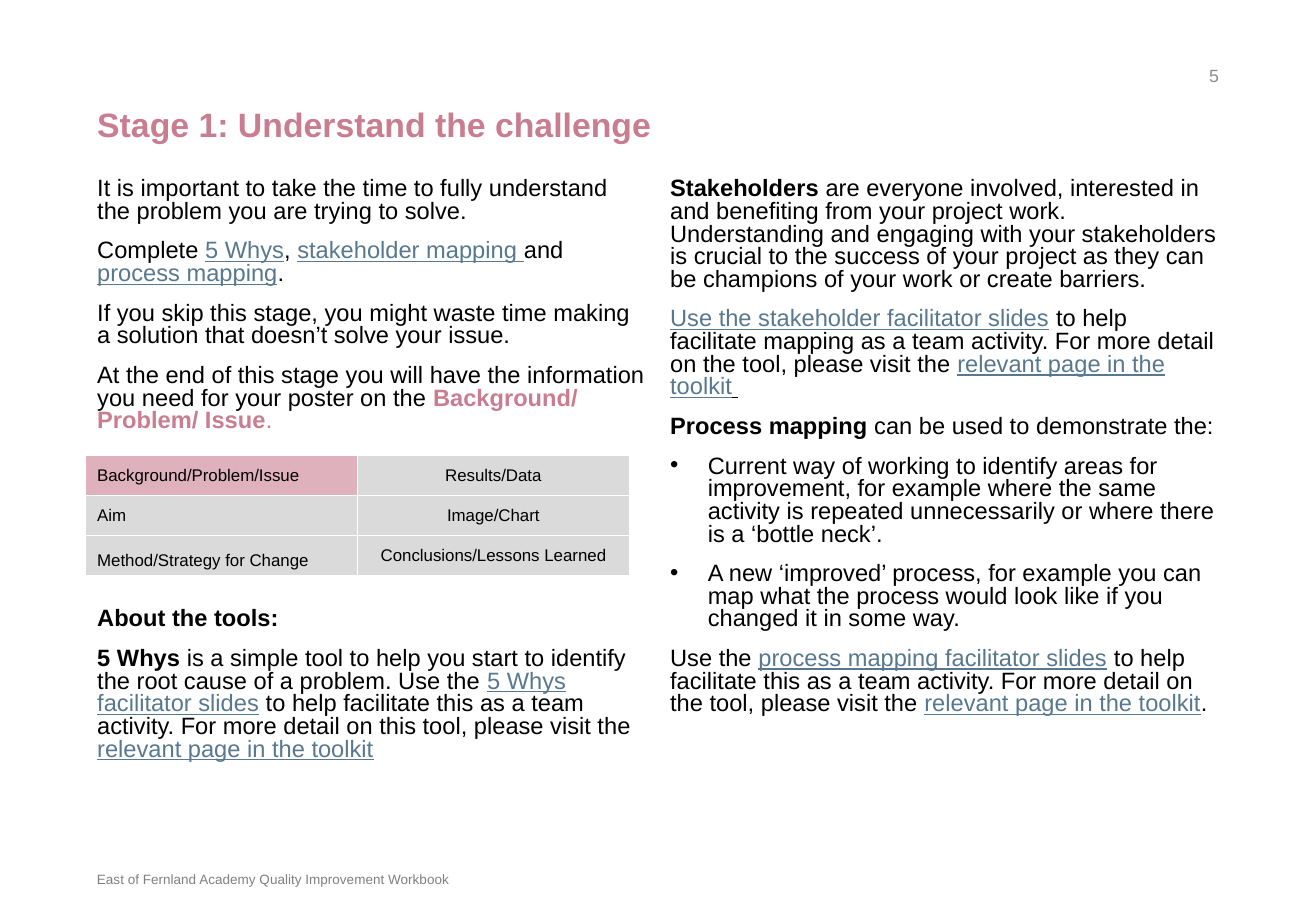
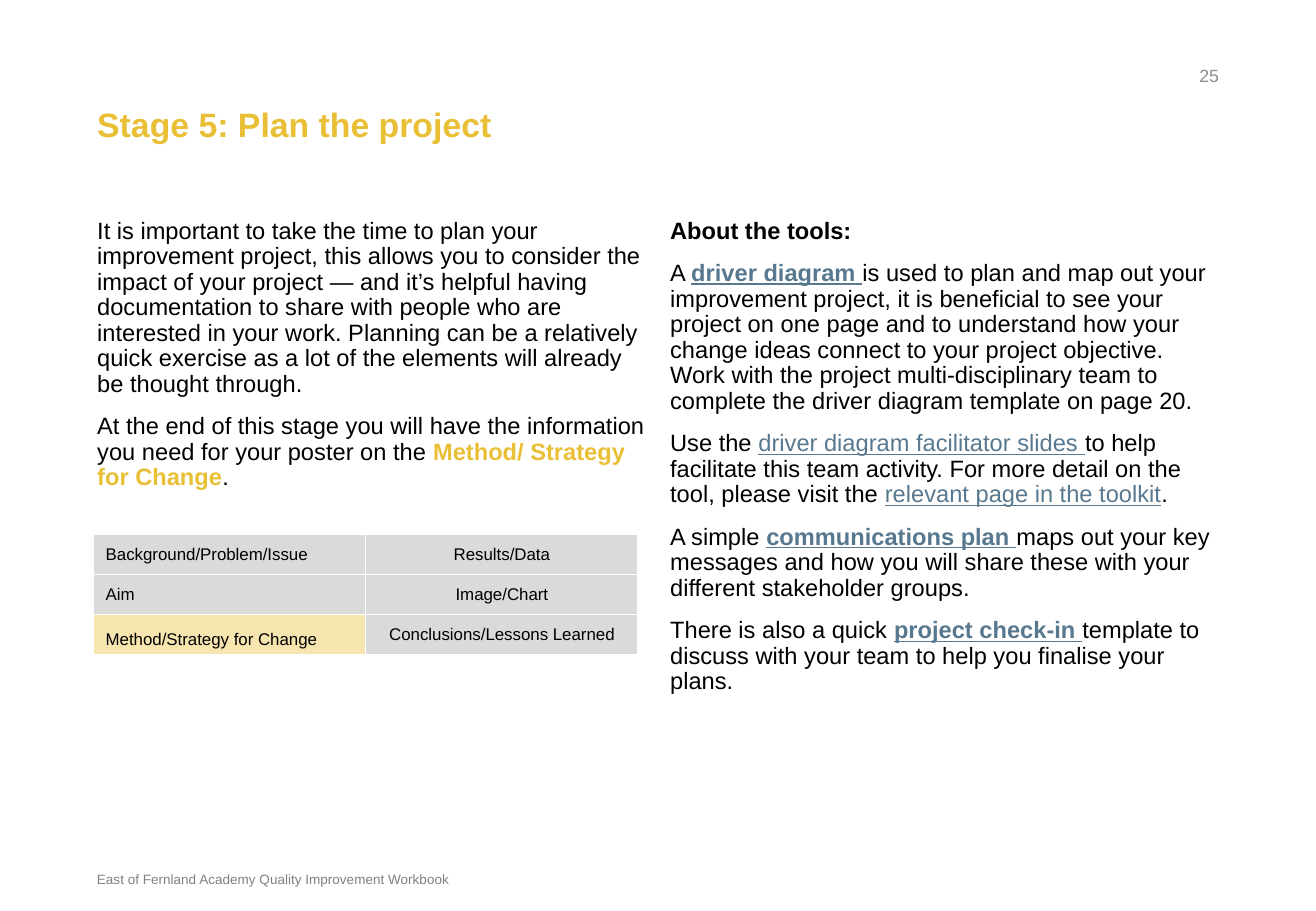
from lxml import etree
from pptx import Presentation
from pptx import util as u
from pptx.dml.color import RGBColor
from pptx.enum import text as t
from pptx.oxml.ns import qn

FONT = "Arial"
COLOURS = {
    "text": "000000", "link": "57788F", "number": "8C8C8C", "footer": "808080",
    "cell": "DADADA", "border": "FFFFFF",
    "rose": "C97D91", "rose_tint": "DFB1BD",
    "gold": "E9BF35", "gold_tint": "F6E5AE",
}
FOOTER = "East of Fernland Academy Quality Improvement Workbook"
POSTER = [
    ("Background/Problem/Issue", "Results/Data"),
    ("Aim", "Image/Chart"),
    ("Method/Strategy for Change", "Conclusions/Lessons Learned"),
]
TITLE_BOX = (0.7, 0.84, 9.43, 0.77)
NUMBER_BOX = (7.79, 0.42, 2.34, 0.4)
FOOTER_BOX = (0.7, 6.95, 6.73, 0.4)
TWO_CONTENT = 3
SPACE_BEFORE = 10

# A paragraph holds runs, each a string or a (text, style words) pair,
# and optional keys: "before" (points) and "bullet".
STAGES = [
    {
        "title": "Stage 1: Understand the challenge", "number": "5", "accent": "rose",
        "body": (0.7, 1.42, 9.43, 5.1), "spacing": 0.8,
        "table": (0.7, 3.75, 4.48, 0.99), "highlight": 0,
        "columns": [
            [
                {"runs": ["It is important to take the time to fully understand the problem "
                          "you are trying to solve."]},
                {"runs": ["Complete ", ("5 Whys", "link"), ", ",
                          ("stakeholder mapping ", "link"), "and ",
                          ("process mapping", "link"), "."]},
                {"runs": ["If you skip this stage, you might waste time making a solution "
                          "that doesn’t solve your issue."]},
                {"runs": ["At the end of this stage you will have the information you need "
                          "for your poster on the ",
                          ("Background/ Problem/ Issue", "accent bold"), (".", "accent")]},
                {"runs": [("About the tools:", "bold")], "before": 104},
                {"runs": [("5 Whys ", "bold"),
                          "is a simple tool to help you start to identify the root cause of "
                          "a problem. Use the ", ("5 Whys facilitator slides", "link"),
                          " to help facilitate this as a team activity. For more detail on "
                          "this tool, please visit the ",
                          ("relevant page in the toolkit", "link")]},
            ],
            [
                {"runs": [("Stakeholders", "bold"),
                          " are everyone involved, interested in and benefiting from your "
                          "project work. Understanding and engaging with your stakeholders "
                          "is crucial to the success of your project as they can be "
                          "champions of your work or create barriers."]},
                {"runs": [("Use the stakeholder facilitator slides", "link"),
                          " to help facilitate mapping as a team activity. For more detail "
                          "on the tool, please visit the ",
                          ("relevant page in the toolkit", "link"), (" ", "underline")]},
                {"runs": [("Process mapping ", "bold"), "can be used to demonstrate the:"]},
                {"runs": ["Current way of working to identify areas for improvement, for "
                          "example where the same activity is repeated unnecessarily or "
                          "where there is a ‘bottle neck’."], "bullet": True},
                {"runs": ["A new ‘improved’ process, for example you can map what the "
                          "process would look like if you changed it in some way."],
                 "bullet": True},
                {"runs": ["Use the ", ("process mapping facilitator slides", "link"),
                          " to help facilitate this as a team activity. For more detail on "
                          "the tool, please visit the ",
                          ("relevant page in the toolkit", "link"), "."]},
            ],
        ],
    },
    {
        "title": "Stage 5: Plan the project", "number": "25", "accent": "gold",
        "body": (0.7, 1.75, 9.43, 5.45), "spacing": 0.9,
        "table": (0.77, 4.4, 4.48, 0.99), "highlight": 2,
        "columns": [
            [
                {"runs": ["It is important to take the time to plan your improvement "
                          "project, this allows you to consider the impact of your project "
                          "— and it’s helpful having documentation to share with people who "
                          "are interested in your work. Planning can be a relatively quick "
                          "exercise as a lot of the elements will already be thought "
                          "through."]},
                {"runs": ["At the end of this stage you will have the information you need "
                          "for your poster on the ",
                          ("Method/ Strategy for Change", "accent bold"), "."]},
            ],
            [
                {"runs": [("About the tools:", "bold")]},
                {"runs": ["A ", ("driver diagram ", "link bold"),
                          "is used to plan and map out your improvement project, it is "
                          "beneficial to see your project on one page and to understand how "
                          "your change ideas connect to your project objective. Work with "
                          "the project multi-disciplinary team to complete the driver "
                          "diagram template on page 20."]},
                {"runs": ["Use the ", ("driver diagram facilitator slides ", "link"),
                          "to help facilitate this team activity. For more detail on the "
                          "tool, please visit the ",
                          ("relevant page in the toolkit", "link"), "."]},
                {"runs": ["A simple ", ("communications plan ", "link bold"),
                          "maps out your key messages and how you will share these with "
                          "your different stakeholder groups."]},
                {"runs": ["There is also a quick ", ("project check-in ", "link bold"),
                          "template to discuss with your team to help you finalise your "
                          "plans."]},
            ],
        ],
    },
]


def inches(box):
    return [u.Inches(length) for length in box]


def rgb(name):
    return RGBColor.from_string(COLOURS[name])


def set_all(target, values):
    for name, value in values.items():
        setattr(target, name, value)


def add_run(paragraph, words, size, colour="text", bold=False, underline=False):
    run = paragraph.add_run()
    run.text = words
    set_all(run.font, {"name": FONT, "size": u.Pt(size), "bold": bold,
                       "underline": underline})
    run.font.color.rgb = rgb(colour)


def set_frame(shape, anchor):
    set_all(shape.text_frame, {"word_wrap": True, "auto_size": t.MSO_AUTO_SIZE.NONE,
                               "vertical_anchor": anchor})
    return shape.text_frame


def move(shape, box):
    set_all(shape, dict(zip(("left", "top", "width", "height"), inches(box))))


def set_bullet(paragraph, bullet):
    properties = paragraph._p.get_or_add_pPr()
    indent = u.Inches(0.31) if bullet else 0
    properties.set("marL", str(indent))
    properties.set("indent", str(-indent))
    if bullet:
        etree.SubElement(properties, qn("a:buChar"), char="•")
    else:
        etree.SubElement(properties, qn("a:buNone"))


def fill_title(shape, words, colour):
    move(shape, TITLE_BOX)
    paragraph = set_frame(shape, t.MSO_ANCHOR.TOP).paragraphs[0]
    set_all(paragraph, {"alignment": t.PP_ALIGN.LEFT, "line_spacing": 0.9})
    add_run(paragraph, words, 20, colour, bold=True)


def fill_column(shape, box, paragraphs, spacing, accent):
    move(shape, box)
    frame = set_frame(shape, t.MSO_ANCHOR.TOP)
    for index, content in enumerate(paragraphs):
        paragraph = frame.add_paragraph() if index else frame.paragraphs[0]
        set_all(paragraph, {"line_spacing": spacing, "alignment": t.PP_ALIGN.LEFT,
                            "space_before": u.Pt(content.get("before", SPACE_BEFORE))})
        set_bullet(paragraph, content.get("bullet", False))
        for item in content["runs"]:
            words, style = (item, "") if isinstance(item, str) else item
            link = "link" in style
            colour = "link" if link else accent if "accent" in style else "text"
            add_run(paragraph, words, 14, colour, "bold" in style,
                    link or "underline" in style)


def add_label(slide, box, words, size, colour, anchor, alignment):
    label = slide.shapes.add_textbox(*inches(box))
    paragraph = set_frame(label, anchor).paragraphs[0]
    paragraph.alignment = alignment
    add_run(paragraph, words, size, colour)


def add_borders(cell):
    properties = cell._tc.get_or_add_tcPr()
    for side in ("lnL", "lnR", "lnT", "lnB"):
        line = etree.SubElement(properties, qn(f"a:{side}"), w=str(u.Pt(1)))
        fill = etree.SubElement(line, qn("a:solidFill"))
        etree.SubElement(fill, qn("a:srgbClr"), val=COLOURS["border"])


def add_poster_table(slide, box, highlight, tint):
    """Draw the poster sections, with one cell of the first column highlighted."""
    table = slide.shapes.add_table(len(POSTER), len(POSTER[0]), *inches(box)).table
    set_all(table, {"first_row": False, "horz_banding": False})
    for row, sections in enumerate(POSTER):
        for column, section in enumerate(sections):
            cell = table.cell(row, column)
            cell.vertical_anchor = t.MSO_ANCHOR.MIDDLE
            add_borders(cell)
            cell.fill.solid()
            cell.fill.fore_color.rgb = rgb(tint if (row, column) == (highlight, 0) else "cell")
            paragraph = cell.text_frame.paragraphs[0]
            paragraph.alignment = t.PP_ALIGN.CENTER if column else t.PP_ALIGN.LEFT
            if section.startswith("Method"):
                paragraph.line_spacing = 1.5
            add_run(paragraph, section, 10)


def add_stage_slide(presentation, stage):
    slide = presentation.slides.add_slide(presentation.slide_layouts[TWO_CONTENT])
    accent = stage["accent"]
    fill_title(slide.shapes.title, stage["title"], accent)
    left, top, width, height = stage["body"]
    half = width / 2
    for index, paragraphs in enumerate(stage["columns"]):
        fill_column(slide.placeholders[index + 1], (left + index * half, top, half, height),
                    paragraphs, stage["spacing"], accent)
    add_poster_table(slide, stage["table"], stage["highlight"], f"{accent}_tint")
    add_label(slide, NUMBER_BOX, stage["number"], 10.5, "number",
              t.MSO_ANCHOR.MIDDLE, t.PP_ALIGN.RIGHT)
    add_label(slide, FOOTER_BOX, FOOTER, 8, "footer", t.MSO_ANCHOR.BOTTOM, t.PP_ALIGN.LEFT)


def main():
    presentation = Presentation()
    set_all(presentation, {"slide_width": u.Inches(10.83), "slide_height": u.Inches(7.5)})
    for stage in STAGES:
        add_stage_slide(presentation, stage)
    presentation.save("out.pptx")


if __name__ == "__main__":
    main()
